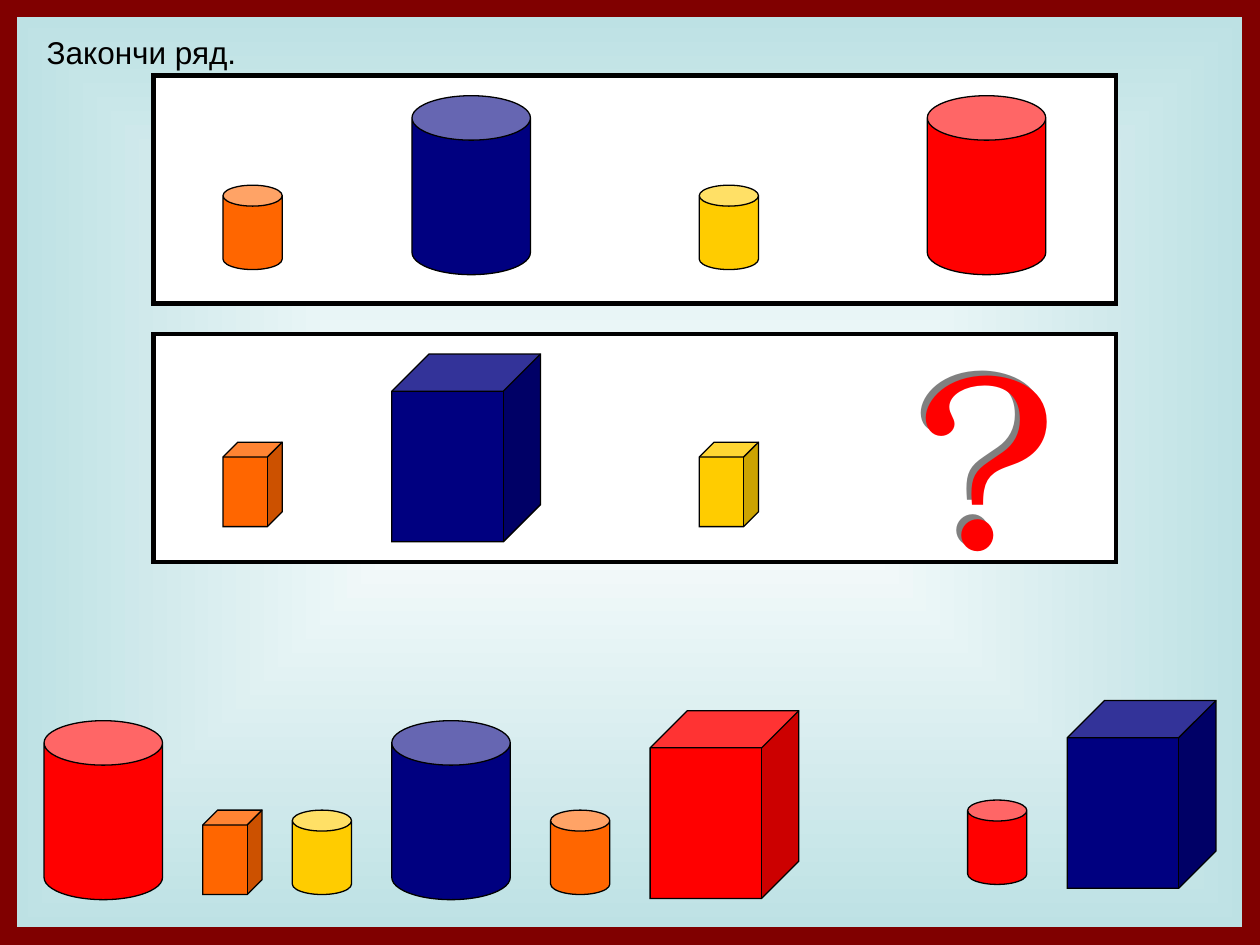
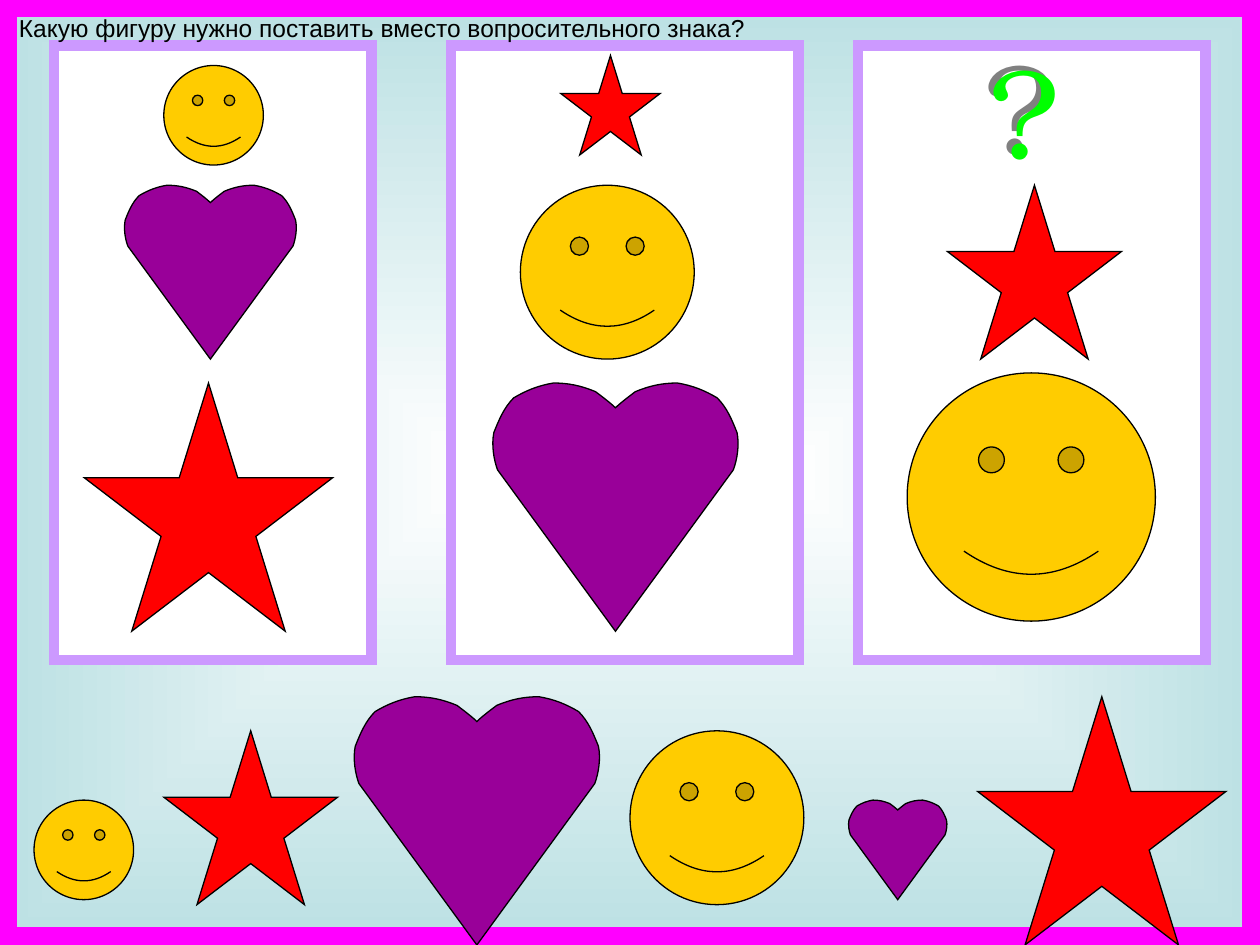
import pptx
import pptx.util
import pptx.oxml
import pptx.dml.color
import pptx.enum.shapes
import pptx.enum.text
import lxml.etree

Inches = pptx.util.Inches
Pt = pptx.util.Pt
PRESET = pptx.enum.shapes.MSO_SHAPE
DRAWING = "http://schemas.openxmlformats.org/drawingml/2006/main"
NAMESPACE = f'xmlns:a="{DRAWING}"'

COLORS = {
    "black": "000000",
    "white": "FFFFFF",
    "mist": "BBE0E3",
    "maroon": "800000",
    "magenta": "FF00FF",
    "lilac": "CC99FF",
    "navy": "000080",
    "orange": "FF6600",
    "yellow": "FFCC00",
    "red": "FF0000",
    "green": "00FF00",
    "purple": "990099",
    "gray": "808080",
}
RGB = {name: pptx.dml.color.RGBColor.from_string(value) for name, value in COLORS.items()}

HEART_SIZE = 1000
HEART_NOTCH = (500, 100)
HEART_TIP = (500, 1000)
LEFT_CURVES = [
    [(480, 80), (440, 50), (420, 35)],
    [(360, 10), (310, 0), (250, 0)],
    [(190, 10), (140, 30), (90, 60)],
    [(50, 100), (30, 150), (10, 200)],
    [(0, 250), (10, 310), (25, 350)],
]
left_points = [HEART_NOTCH] + [point for curve in LEFT_CURVES for point in curve]
right_points = [(HEART_SIZE - x, y) for x, y in reversed(left_points)]
RIGHT_CURVES = [right_points[i:i + 3] for i in range(1, len(right_points), 3)]
HEART_SEGMENTS = (
    [("cubicBezTo", curve) for curve in LEFT_CURVES]
    + [("lnTo", [HEART_TIP]), ("lnTo", [right_points[0]])]
    + [("cubicBezTo", curve) for curve in RIGHT_CURVES]
)


def add_figure(slide, kind, left, top, width, height, fill=None, line="black", line_width=0.75):
    box = [Inches(value) for value in (left, top, width, height)]
    if kind == "heart":
        builder = slide.shapes.build_freeform(*HEART_NOTCH)
        builder.add_line_segments([points[-1] for _, points in HEART_SEGMENTS])
        shape = builder.convert_to_shape()
        shape.left, shape.top, shape.width, shape.height = box
        outline = shape._element.spPr.find(f".//{{{DRAWING}}}pathLst")[0]
        outline.set("w", str(HEART_SIZE))
        outline.set("h", str(HEART_SIZE))
        for child in list(outline):
            outline.remove(child)
        for tag, points in [("moveTo", [HEART_NOTCH])] + HEART_SEGMENTS:
            segment = lxml.etree.SubElement(outline, f"{{{DRAWING}}}{tag}")
            for x, y in points:
                lxml.etree.SubElement(segment, f"{{{DRAWING}}}pt", x=str(x), y=str(y))
        lxml.etree.SubElement(outline, f"{{{DRAWING}}}close")
    else:
        shape = slide.shapes.add_shape(kind, *box)
    shape.shadow.inherit = False
    if fill:
        shape.fill.solid()
        shape.fill.fore_color.rgb = RGB[fill]
    else:
        shape.fill.background()
    shape.line.color.rgb = RGB[line]
    shape.line.width = Pt(line_width)
    lxml.etree.SubElement(shape._element.spPr.ln, f"{{{DRAWING}}}miter", lim="800000")
    return shape


def set_text(shape, text, box, font_name, size, color):
    shape.left, shape.top, shape.width, shape.height = [Inches(value) for value in box]
    frame = shape.text_frame
    frame.text = text
    frame.word_wrap = True
    frame.auto_size = pptx.enum.text.MSO_AUTO_SIZE.NONE
    frame.vertical_anchor = pptx.enum.text.MSO_ANCHOR.TOP
    paragraph = frame.paragraphs[0]
    paragraph.alignment = pptx.enum.text.PP_ALIGN.LEFT
    paragraph.font.name = font_name
    paragraph.font.size = Pt(size)
    paragraph.font.color.rgb = RGB[color]


presentation = pptx.Presentation()
presentation.slide_width = Inches(10)
presentation.slide_height = Inches(7.5)

background = presentation.slide_master.background.fill
background.gradient()
for stop, name, position in zip(background.gradient_stops, ("white", "mist"), (0, 1)):
    stop.color.rgb = RGB[name]
    stop.position = position
gradient = presentation.slide_master.background._cSld.bg.bgPr.find(f".//{{{DRAWING}}}gradFill")
for direction in gradient.findall(f"{{{DRAWING}}}lin"):
    gradient.remove(direction)
gradient.append(pptx.oxml.parse_xml(
    f'<a:path {NAMESPACE} path="shape">'
    '<a:fillToRect l="50000" t="50000" r="50000" b="50000"/></a:path>'))

BIG_CAN = (PRESET.CAN, 0.94, 1.42, 0.375)
SMALL_CAN = (PRESET.CAN, 0.47, 0.67, 0.354)
BIG_CUBE = (PRESET.CUBE, 1.18, 1.49, 0.25)
SMALL_CUBE = (PRESET.CUBE, 0.47, 0.67, 0.25)
SOLIDS = [
    (SMALL_CAN, 1.77, 1.47, "orange"),
    (BIG_CAN, 3.27, 0.76, "navy"),
    (SMALL_CAN, 5.55, 1.47, "yellow"),
    (BIG_CAN, 7.36, 0.76, "red"),
    (SMALL_CUBE, 1.77, 3.51, "orange"),
    (BIG_CUBE, 3.11, 2.81, "navy"),
    (SMALL_CUBE, 5.55, 3.51, "yellow"),
    (BIG_CAN, 0.35, 5.72, "red"),
    (SMALL_CUBE, 1.61, 6.43, "orange"),
    (SMALL_CAN, 2.32, 6.43, "yellow"),
    (BIG_CAN, 3.11, 5.72, "navy"),
    (SMALL_CAN, 4.37, 6.43, "orange"),
    (BIG_CUBE, 5.16, 5.64, "red"),
    (SMALL_CAN, 7.68, 6.35, "red"),
    (BIG_CUBE, 8.47, 5.56, "navy"),
]

SMALL, MEDIUM, LARGE = 0.79, 1.38, 1.97
SMILEY = (PRESET.SMILEY_FACE, "yellow")
STAR = (PRESET.STAR_5_POINT, "red")
HEART = ("heart", "purple")
FLAT_FIGURES = [
    (SMILEY, SMALL, 1.3, 0.52),
    (HEART, MEDIUM, 0.98, 1.47),
    (STAR, LARGE, 0.67, 3.04),
    (STAR, SMALL, 4.45, 0.44),
    (SMILEY, MEDIUM, 4.13, 1.47),
    (HEART, LARGE, 3.9, 3.04),
    (STAR, MEDIUM, 7.52, 1.47),
    (SMILEY, LARGE, 7.2, 2.96),
    (SMILEY, SMALL, 0.27, 6.35),
    (STAR, MEDIUM, 1.3, 5.8),
    (HEART, LARGE, 2.8, 5.53),
    (SMILEY, MEDIUM, 5, 5.8),
    (HEART, SMALL, 6.73, 6.35),
    (STAR, LARGE, 7.76, 5.53),
]

PAGES = [
    {
        "title": ("Закончи ряд.", (0.27, 0.21, 2.05, 0.4), 18),
        "frame": "maroon",
        "cards": [(1.22, 0.6, 7.64, 1.81), (1.22, 2.65, 7.64, 1.81)],
        "card_line": ("black", 2.5),
        "question": ((7.2, 2.33, 1.18, 2.47), 142, "red"),
    },
    {
        "title": ("Какую фигуру нужно поставить вместо вопросительного знака?",
                  (0.05, 0.05, 7.56, 0.33), 14),
        "frame": "magenta",
        "cards": [(0.43, 0.36, 2.52, 4.88), (3.58, 0.36, 2.76, 4.88), (6.81, 0.36, 2.76, 4.88)],
        "card_line": ("lilac", 6),
        "question": ((7.76, 0.21, 0.94, 1.3), 72, "green"),
    },
]

slides = []
for page in PAGES:
    slide = presentation.slides.add_slide(presentation.slide_layouts[5])
    slides.append(slide)
    for card in page["cards"]:
        add_figure(slide, PRESET.RECTANGLE, *card, "white", *page["card_line"])
    add_figure(slide, PRESET.RECTANGLE, 0, 0, 10, 7.5, None, page["frame"], 20)

    box, size, color = page["question"]
    question = slide.shapes.add_textbox(0, 0, 0, 0)
    set_text(question, "?", box, "TeX Gyre Bonum", size, color)
    question._element.spPr.append(pptx.oxml.parse_xml(
        f'<a:effectLst {NAMESPACE}><a:outerShdw dist="{Pt(4)}" dir="13500000">'
        f'<a:srgbClr val="{COLORS["gray"]}"/></a:outerShdw></a:effectLst>'))

    text, box, size = page["title"]
    title = slide.shapes.title
    set_text(title, text, box, "Arial", size, "black")
    slide.shapes._spTree.append(title._element)

solids_slide, flat_slide = slides
for (kind, width, height, depth), left, top, color in SOLIDS:
    solid = add_figure(solids_slide, kind, left, top, width, height, color)
    solid.adjustments[0] = depth

for (kind, color), size, left, top in FLAT_FIGURES:
    add_figure(flat_slide, kind, left, top, size, size, color)

presentation.save("out.pptx")
